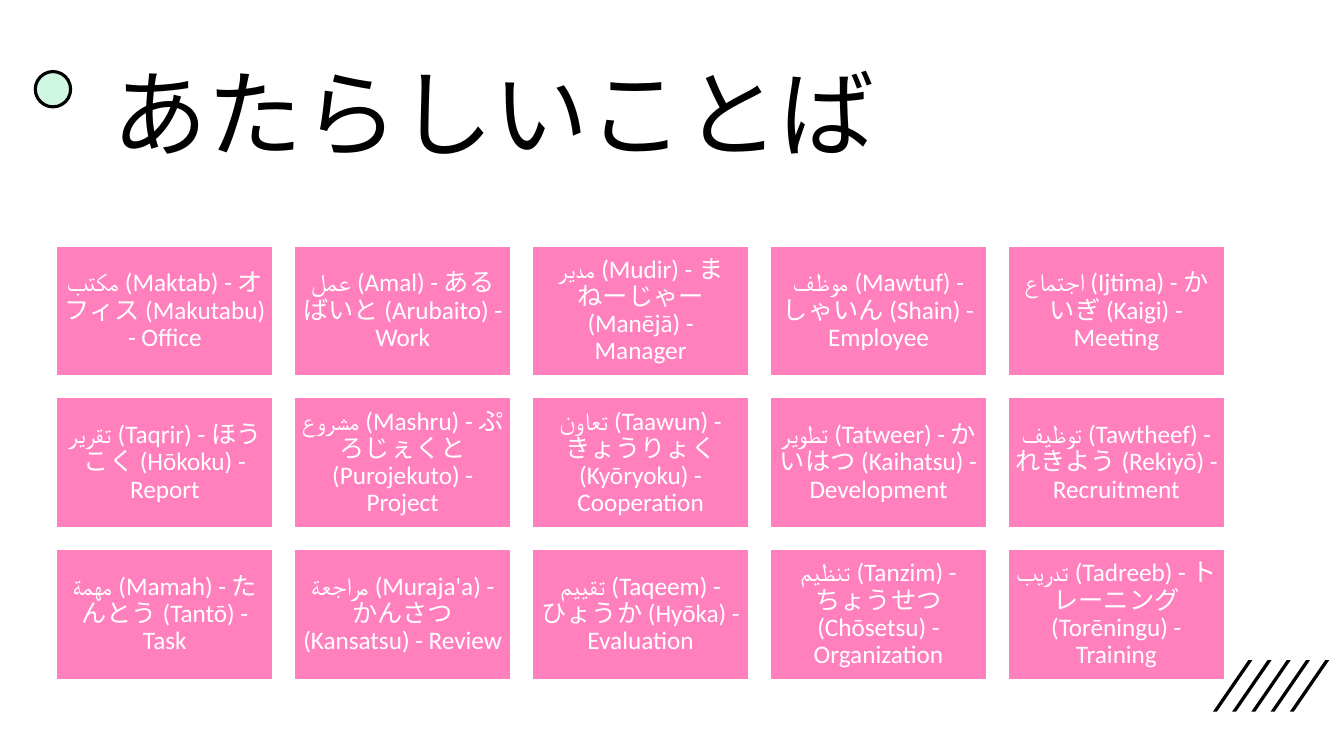
from pptx import Presentation
from pptx.dml.color import RGBColor
from pptx.enum.shapes import MSO_SHAPE as SHAPE
from pptx.enum.text import MSO_ANCHOR as ANCHOR, PP_ALIGN as ALIGN
from pptx.util import Inches, Pt

COLORS = {"black": "000000", "white": "FFFFFF", "pink": "FF80BD", "mint": "CFF7E1"}

WORDS = [
    "مكتب (Maktab) - オフィス (Makutabu) - Office",
    "عمل (Amal) - あるばいと (Arubaito) - Work",
    "مدير (Mudir) - まねーじゃー (Manējā) - Manager",
    "موظف (Mawtuf) - しゃいん (Shain) - Employee",
    "اجتماع (Ijtima) - かいぎ (Kaigi) - Meeting",
    "تقرير (Taqrir) - ほうこく (Hōkoku) - Report",
    "مشروع (Mashru) - ぷろじぇくと (Purojekuto) - Project",
    "تعاون (Taawun) - きょうりょく (Kyōryoku) - Cooperation",
    "تطوير (Tatweer) - かいはつ (Kaihatsu) - Development",
    "توظيف (Tawtheef) - れきよう (Rekiyō) - Recruitment",
    "مهمة (Mamah) - たんとう (Tantō) - Task",
    "مراجعة (Muraja'a) - かんさつ (Kansatsu) - Review",
    "تقييم (Taqeem) - ひょうか (Hyōka) - Evaluation",
    "تنظيم (Tanzim) - ちょうせつ (Chōsetsu) - Organization",
    "تدريب (Tadreeb) - トレーニング (Torēningu) - Training",
]


def rgb(name):
    return RGBColor.from_string(COLORS[name])


def write(sp, text, size=18, color="white", align=ALIGN.CENTER, inset=0.07):
    tf = sp.text_frame
    tf.word_wrap = True
    tf.vertical_anchor = ANCHOR.MIDDLE
    tf.margin_left = tf.margin_right = Inches(inset)
    tf.margin_top = tf.margin_bottom = Inches(inset)
    p = tf.paragraphs[0]
    p.alignment = align
    p.line_spacing = 0.9
    r = p.add_run()
    r.text = text
    r.font.name = "Calibri"
    r.font.size = Pt(size)
    r.font.color.rgb = rgb(color)


class Deck:
    """Draws on one slide, with lengths in percent of its width and height."""

    def __init__(self, width, height):
        self.prs = Presentation()
        self.prs.slide_width = Inches(width)
        self.prs.slide_height = Inches(height)
        self.s = self.prs.slides.add_slide(self.prs.slide_layouts[6])

    def x(self, share):
        return round(self.prs.slide_width * share / 100)

    def y(self, share):
        return round(self.prs.slide_height * share / 100)

    def box(self, x, y, w, h):
        return self.x(x), self.y(y), self.x(w), self.y(h)

    def paint(self, sp, fill, line=None, weight=1):
        sp.shadow.inherit = False
        sp.fill.solid()
        sp.fill.fore_color.rgb = rgb(fill)
        if line:
            sp.line.color.rgb = rgb(line)
            sp.line.width = Pt(weight)
        else:
            sp.line.fill.background()

    def shape(self, kind, x, y, w, h, **style):
        sp = self.s.shapes.add_shape(kind, *self.box(x, y, w, h))
        self.paint(sp, **style)
        return sp

    def text(self, x, y, w, h, text, **style):
        write(self.s.shapes.add_textbox(*self.box(x, y, w, h)), text, **style)

    def slash(self, x, y, lean, thick, h):
        top, bottom = self.y(y), self.y(y + h)
        fb = self.s.shapes.build_freeform(self.x(x + thick), bottom)
        fb.add_line_segments([
            (self.x(x), bottom),
            (self.x(x + lean), top),
            (self.x(x + lean + thick), top),
        ], close=True)
        self.paint(fb.convert_to_shape(), "black")


def main():
    deck = Deck(13.33, 7.5)
    for i in range(5):
        deck.slash(90.25 + i * 1.43, 87.33, lean=2.63, thick=0.3, h=6.8)
    deck.shape(SHAPE.OVAL, 2.63, 9.47, 2.63, 4.67, fill="mint", line="black", weight=2.25)
    deck.text(7.65, 5.87, 86.27, 19.6, "あたらしいことば",
              size=68, color="black", align=ALIGN.LEFT, inset=0.1)
    for i, word in enumerate(WORDS):
        row, col = divmod(i, 5)
        card = deck.shape(SHAPE.RECTANGLE, 4.2 + col * 17.7, 32.53 + row * 20.07,
                          16.13, 17.2, fill="pink", line="white")
        write(card, word)
    deck.prs.save("out.pptx")


if __name__ == "__main__":
    main()
